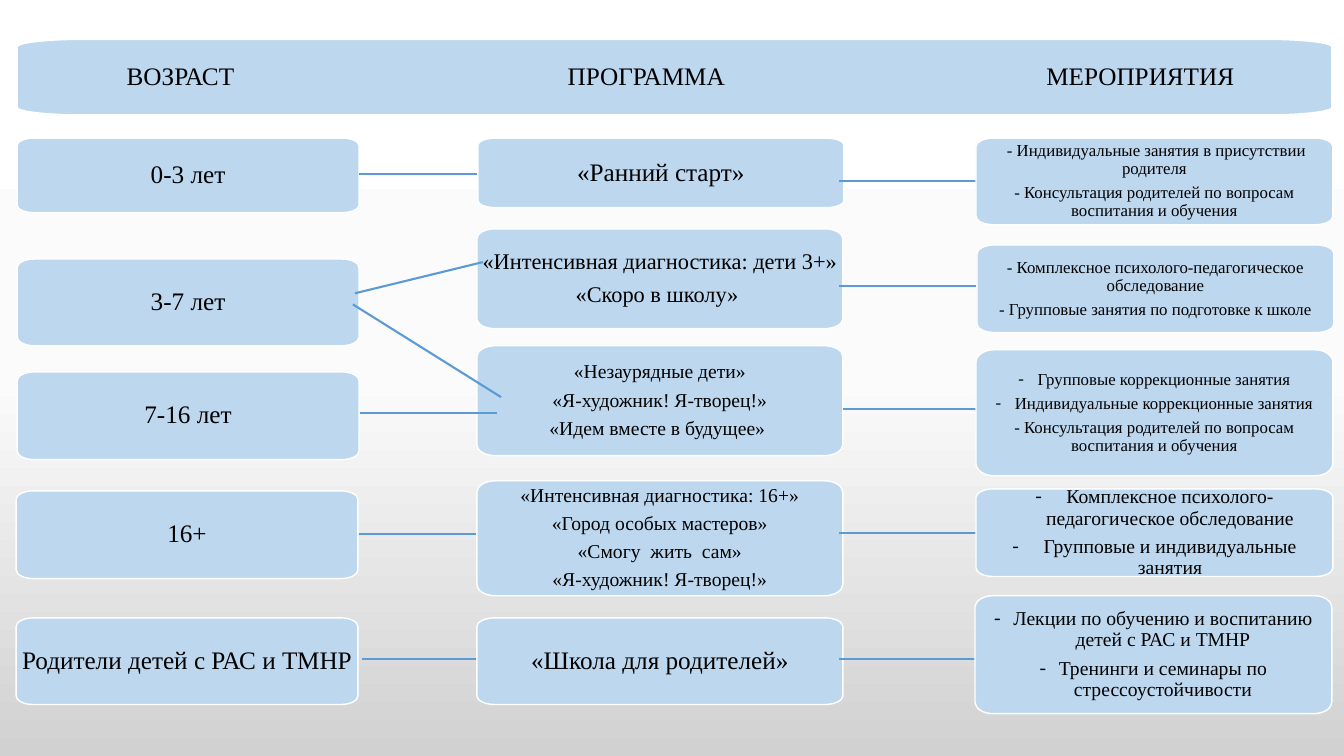
from copy import deepcopy
from lxml import etree
from pptx import Presentation
from pptx.dml.color import RGBColor
from pptx.enum.shapes import MSO_CONNECTOR
from pptx.enum.text import MSO_ANCHOR, PP_ALIGN
from pptx.oxml.ns import qn
from pptx.util import Inches, Pt

STRAIGHT = MSO_CONNECTOR.STRAIGHT
MIDDLE = MSO_ANCHOR.MIDDLE
CENTER, LEFT = PP_ALIGN.CENTER, PP_ALIGN.LEFT

HEADINGS = ["ВОЗРАСТ", "ПРОГРАММА", "МЕРОПРИЯТИЯ"]
AGES = [
    (0.17, 1.37, 0.74, 18, 0, ["0-3 лет"]),
    (0.17, 2.57, 0.86, 18, 0, ["3-7 лет"]),
    (0.17, 3.69, 0.87, 18, 0, ["7-16 лет"]),
    (0.16, 4.87, 0.87, 18, 0, ["16+"]),
    (0.16, 6.13, 0.86, 18, 0, ["Родители детей с РАС и ТМНР"]),
]
PROGRAMS = [
    (4.74, 1.37, 0.69, 18, 0, ["«Ранний старт»"]),
    (4.73, 2.27, 0.99, 16, 0, ["«Интенсивная диагностика: дети 3+»", "«Скоро в школу» "]),
    (4.73, 3.43, 1.09, 14, 0, ["«Незаурядные дети»", "«Я-художник! Я-творец!»",
                               "«Идем вместе в будущее» "]),
    (4.73, 4.77, 1.14, 14, 0, ["«Интенсивная диагностика: 16+»", "«Город особых мастеров»",
                               "«Смогу  жить  сам»", "«Я-художник! Я-творец!»"]),
    (4.73, 6.13, 0.86, 18, 0, ["«Школа для родителей»"]),
]
ACTIVITIES = [
    (9.68, 1.37, 0.86, 12, 0, [" - Индивидуальные занятия в присутствии родителя",
                               "- Консультация родителей по вопросам воспитания и обучения"]),
    (9.69, 2.43, 0.87, 12, 0, ["- Комплексное психолого-педагогическое обследование",
                               "- Групповые занятия по подготовке к школе"]),
    (9.68, 3.47, 1.25, 12, 0.19, ["Групповые коррекционные занятия",
                                  "Индивидуальные коррекционные занятия",
                                  "- Консультация родителей по вопросам воспитания и обучения"]),
    (9.68, 4.85, 0.87, 14, 0.31, ["Комплексное психолого-педагогическое обследование",
                                  "Групповые и индивидуальные занятия"]),
    (9.67, 5.91, 1.17, 14, 0.19, ["Лекции по обучению и воспитанию детей с РАС и ТМНР",
                                  "Тренинги и семинары по стрессоустойчивости"]),
]
AGE_WIDTH, PROGRAM_WIDTH, ACTIVITY_WIDTH = 3.39, 3.63, 3.54
HEADER = (0.17, 0.39, 13.04, 0.75)
HEADING_TABS = [1.59, 6.21, 11.11]

AGE_LINKS = [(3.56, 1.73), (3.56, 5.3), (3.59, 6.54)]
ACTIVITY_LINKS = [(8.32, 1.8), (8.32, 2.84), (8.36, 4.06), (8.32, 5.29), (8.32, 6.54)]
LINK_LENGTH = 1.36
TOP_LINKS = [(3.57, 4.1, 4.93, 4.1), (3.5, 3.02, 4.97, 3.94), (3.52, 2.91, 4.79, 2.6)]

THEME = {
    "font": "Times New Roman",
    "heading": 18,
    "ink": RGBColor.from_string("000000"),
    "box": RGBColor.from_string("BDD7EE"),
    "edge": RGBColor.from_string("FFFFFF"),
    "link": RGBColor.from_string("5B9BD5"),
    "backdrop": [(0, "FFFFFF"), (50, "FBFBFB"), (100, "D1D1D1")],
}
CORNER_SHARE_X, CORNER_SHARE_Y, CURVE = 0.05, 0.1, 0.55
INSET = 0.03


def apply(target, values):
    for name, value in values.items():
        setattr(target, name, value)


def add_child(parent, tag, **attributes):
    child = etree.SubElement(parent, qn(tag))
    for name, value in attributes.items():
        child.set(name, str(value))
    return child


def outline(left, top, width, height):
    near_x, near_y = CORNER_SHARE_X, CORNER_SHARE_Y
    bend_x, bend_y = near_x * (1 - CURVE), near_y * (1 - CURVE)
    shares = [
        (0, near_y), (0, bend_y), (bend_x, 0), (near_x, 0),
        (1 - near_x, 0), (1 - bend_x, 0), (1, bend_y), (1, near_y),
        (1, 1 - near_y), (1, 1 - bend_y), (1 - bend_x, 1), (1 - near_x, 1),
        (near_x, 1), (bend_x, 1), (0, 1 - bend_y), (0, 1 - near_y),
    ]
    return [(Inches(left + width * x), Inches(top + height * y)) for x, y in shares]


def round_corners(box):
    steps = list(box._element.iter(qn("a:lnTo")))
    for start in range(0, 15, 4):
        curve = etree.Element(qn("a:cubicBezTo"))
        steps[start].addprevious(curve)
        for step in steps[start:start + 3]:
            curve.append(step[0])
            step.getparent().remove(step)


def add_box(page, place, size, indent, lines, align=CENTER, tabs=()):
    points = outline(*place)
    builder = page.shapes.build_freeform(*points[0])
    builder.add_line_segments(points[1:], close=True)
    box = builder.convert_to_shape()
    round_corners(box)
    box.shadow.inherit = False
    box.fill.solid()
    box.fill.fore_color.rgb = THEME["box"]
    box.line.color.rgb = THEME["edge"]
    box.line.width = Pt(1)
    frame = box.text_frame
    apply(frame, {"word_wrap": True, "vertical_anchor": MIDDLE,
                  **{f"margin_{side}": Inches(INSET) for side in ("left", "top", "right", "bottom")}})
    for index, line in enumerate(lines):
        para = frame.paragraphs[0] if index == 0 else frame.add_paragraph()
        properties = para._p.get_or_add_pPr()
        add_child(add_child(properties, "a:spcAft"), "a:spcPct", val=35000)
        if indent and not line.startswith("-"):
            properties.set("marL", str(Inches(indent)))
            properties.set("indent", str(-Inches(indent)))
            add_child(properties, "a:buFont", typeface=THEME["font"])
            add_child(properties, "a:buChar", char="-")
        if tabs:
            tab_list = add_child(properties, "a:tabLst")
            for position in tabs:
                add_child(tab_list, "a:tab", pos=Inches(position), algn="ctr")
        apply(para, {"alignment": align, "line_spacing": 0.9})
        span = para.add_run()
        span.text = line
        apply(span.font, {"name": THEME["font"], "size": Pt(size)})
        span.font.color.rgb = THEME["ink"]


def add_column(page, width, rows):
    for left, top, height, size, indent, lines in rows:
        add_box(page, (left, top, width, height), size, indent, lines)


def add_link(page, *ends):
    link = page.shapes.add_connector(STRAIGHT, *map(Inches, ends))
    link.line.color.rgb = THEME["link"]
    link.line.width = Pt(1.5)
    add_child(link._element.spPr, "a:effectLst")


def add_level_links(page, starts):
    for left, top in starts:
        add_link(page, left, top, left + LINK_LENGTH, top)


def paint_backdrop(page):
    fill = page.background.fill
    fill.gradient()
    fill.gradient_angle = 270
    stop_list = next(page._element.iter(qn("a:gsLst")))
    stop_list.append(deepcopy(stop_list[-1]))
    for stop, (position, color) in zip(fill.gradient_stops, THEME["backdrop"]):
        stop.position = position / 100
        stop.color.rgb = RGBColor.from_string(color)


def main():
    deck = Presentation()
    apply(deck, {"slide_width": Inches(13.33), "slide_height": Inches(7.5)})
    page = deck.slides.add_slide(deck.slide_layouts[6])
    paint_backdrop(page)
    add_column(page, AGE_WIDTH, AGES)
    add_level_links(page, AGE_LINKS)
    add_column(page, PROGRAM_WIDTH, PROGRAMS)
    add_level_links(page, ACTIVITY_LINKS)
    add_column(page, ACTIVITY_WIDTH, ACTIVITIES)
    for ends in TOP_LINKS:
        add_link(page, *ends)
    heading_line = "".join("\t" + heading for heading in HEADINGS)
    add_box(page, HEADER, THEME["heading"], 0, [heading_line], LEFT, HEADING_TABS)
    deck.save("out.pptx")


if __name__ == "__main__":
    main()
